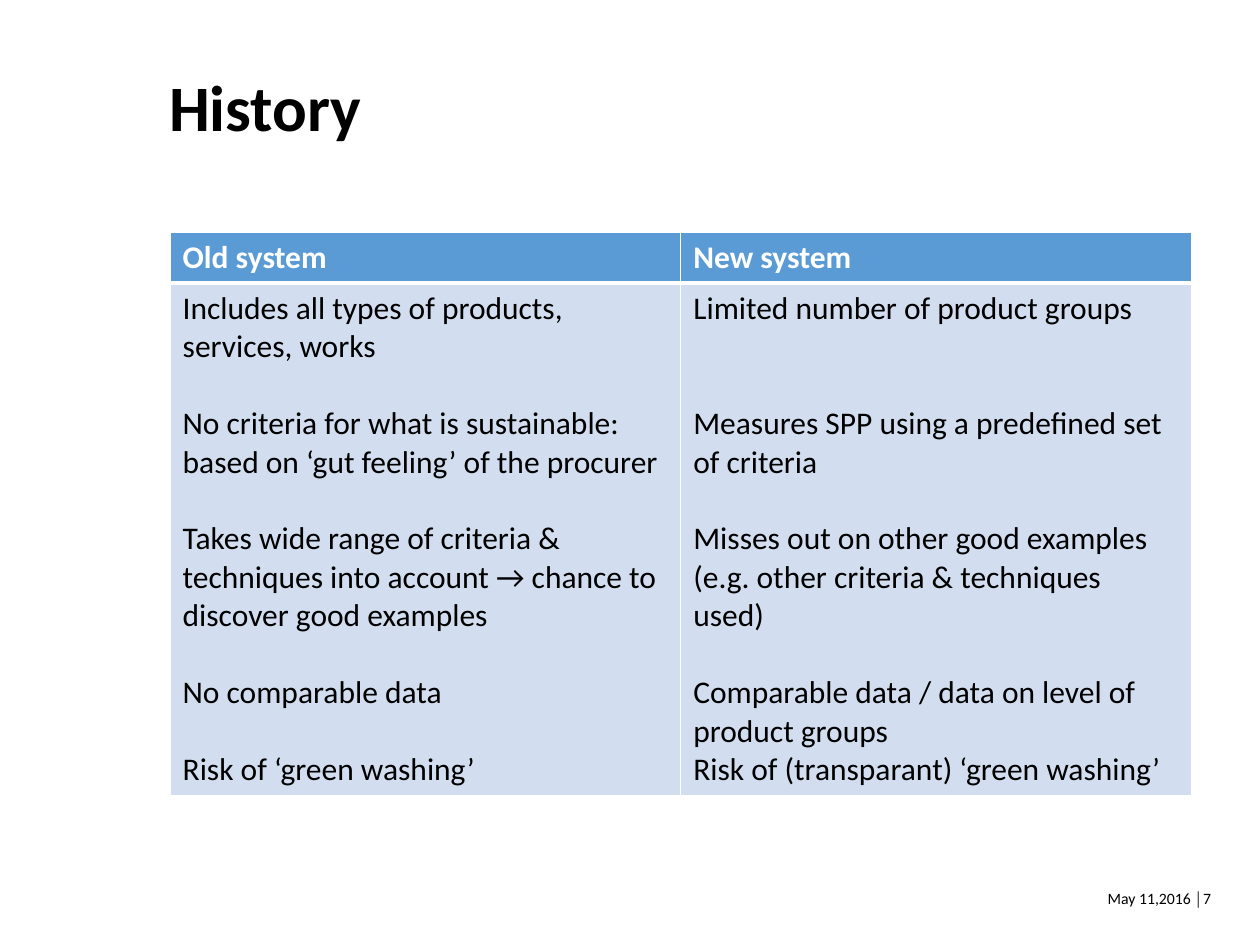
from dataclasses import dataclass

from lxml import etree
from pptx import Presentation
from pptx.dml.color import RGBColor
from pptx.enum.text import MSO_ANCHOR, MSO_AUTO_SIZE, PP_ALIGN
from pptx.oxml.ns import qn
from pptx.util import Pt

LEFT, RIGHT = PP_ALIGN.LEFT, PP_ALIGN.RIGHT
TOP, MIDDLE = MSO_ANCHOR.TOP, MSO_ANCHOR.MIDDLE
NO_AUTOFIT = MSO_AUTO_SIZE.NONE

FONT = "Calibri"
COLORS = {"text": "000000", "white": "FFFFFF", "header": "5B9BD5", "body": "D2DEEF"}
TITLE_ONLY = 5
BODY_SIZE = 18
LINE_HEIGHT = 21.97  # one line of body text
COLUMN_WIDTH = 291.8
HEADER_HEIGHT = 29.2
BODY_HEIGHT = 292.8
THIN, THICK = 1, 3


@dataclass
class Entry:
    text: str
    lines_before: int = 1


@dataclass
class Column:
    heading: str
    entries: list[Entry]


@dataclass
class FooterItem:
    text: str
    left: float
    top: float
    width: float
    height: float
    alignment: int = LEFT
    wrap: bool = True


COLUMNS = [
    Column("Old system", [
        Entry("Includes all types of products, services, works", 0),
        Entry("No criteria for what is sustainable: based on ‘gut feeling’ of the procurer"),
        Entry("Takes wide range of criteria & techniques into account → chance to "
              "discover good examples"),
        Entry("No comparable data"),
        Entry("Risk of ‘green washing’"),
    ]),
    Column("New system", [
        Entry("Limited number of product groups", 0),
        Entry("Measures SPP using a predefined set of criteria", 2),
        Entry("Misses out on other good examples (e.g. other criteria & techniques used)"),
        Entry("Comparable data / data on level of product groups"),
        Entry("Risk of (transparant) ‘green washing’", 0),
    ]),
]

FOOTER = [
    FooterItem("May 11,2016", 596.2, 499, 91.4, 28, RIGHT),
    FooterItem("7", 680.4, 499, 34.6, 28),
    FooterItem("│", 675.4, 504, 19.4, 18, wrap=False),
]


def add_run(paragraph, text: str, size: float, color: str = "text", bold: bool = False) -> None:
    run = paragraph.add_run()
    run.text = text
    run.font.name = FONT
    run.font.size = Pt(size)
    run.font.bold = bold
    run.font.color.rgb = RGBColor.from_string(COLORS[color])


def add_title(slide, text: str) -> None:
    title = slide.shapes.title
    title.left, title.top, title.width, title.height = Pt(96.7), Pt(44.6), Pt(584), Pt(87.8)
    frame = title.text_frame
    frame.auto_size = NO_AUTOFIT
    frame.vertical_anchor = TOP
    frame.margin_left = frame.margin_top = frame.margin_right = frame.margin_bottom = Pt(0)
    paragraph = frame.paragraphs[0]
    paragraph.alignment = LEFT
    paragraph.line_spacing = Pt(38)
    add_run(paragraph, text, 37, bold=True)


def set_borders(cell, top: float, bottom: float) -> None:
    properties = cell._tc.get_or_add_tcPr()
    widths = {"a:lnL": THIN, "a:lnR": THIN, "a:lnT": top, "a:lnB": bottom}
    for position, (tag, width) in enumerate(widths.items()):
        line = etree.Element(qn(tag), w=str(Pt(width)))
        fill = etree.SubElement(line, qn("a:solidFill"))
        etree.SubElement(fill, qn("a:srgbClr"), val=COLORS["white"])
        properties.insert(position, line)


def fill_cell(cell, color: str) -> None:
    cell.fill.solid()
    cell.fill.fore_color.rgb = RGBColor.from_string(COLORS[color])


def add_comparison(slide, columns: list[Column]) -> None:
    table = slide.shapes.add_table(
        2, len(columns), Pt(97.2), Pt(132.5),
        Pt(COLUMN_WIDTH * len(columns)), Pt(HEADER_HEIGHT + BODY_HEIGHT)).table
    table.horz_banding = False
    table.rows[0].height = Pt(HEADER_HEIGHT)
    table.rows[1].height = Pt(BODY_HEIGHT)
    for index, column in enumerate(columns):
        table.columns[index].width = Pt(COLUMN_WIDTH)
        header, body = table.cell(0, index), table.cell(1, index)
        fill_cell(header, "header")
        set_borders(header, THIN, THICK)
        add_run(header.text_frame.paragraphs[0], column.heading, BODY_SIZE, "white", True)
        fill_cell(body, "body")
        set_borders(body, THICK, THIN)
        frame = body.text_frame
        for number, entry in enumerate(column.entries):
            paragraph = frame.add_paragraph() if number else frame.paragraphs[0]
            if entry.lines_before:
                paragraph.space_before = Pt(entry.lines_before * LINE_HEIGHT)
            add_run(paragraph, entry.text, BODY_SIZE)


def add_footer_item(slide, item: FooterItem) -> None:
    box = slide.shapes.add_textbox(Pt(item.left), Pt(item.top), Pt(item.width), Pt(item.height))
    frame = box.text_frame
    frame.word_wrap = item.wrap
    frame.vertical_anchor = MIDDLE
    paragraph = frame.paragraphs[0]
    paragraph.alignment = item.alignment
    add_run(paragraph, item.text, 9)


def main() -> None:
    presentation = Presentation()
    presentation.slide_width, presentation.slide_height = Pt(720), Pt(540)
    slide = presentation.slides.add_slide(presentation.slide_layouts[TITLE_ONLY])
    for item in FOOTER:
        add_footer_item(slide, item)
    add_title(slide, "History")
    add_comparison(slide, COLUMNS)
    presentation.save("out.pptx")


if __name__ == "__main__":
    main()
